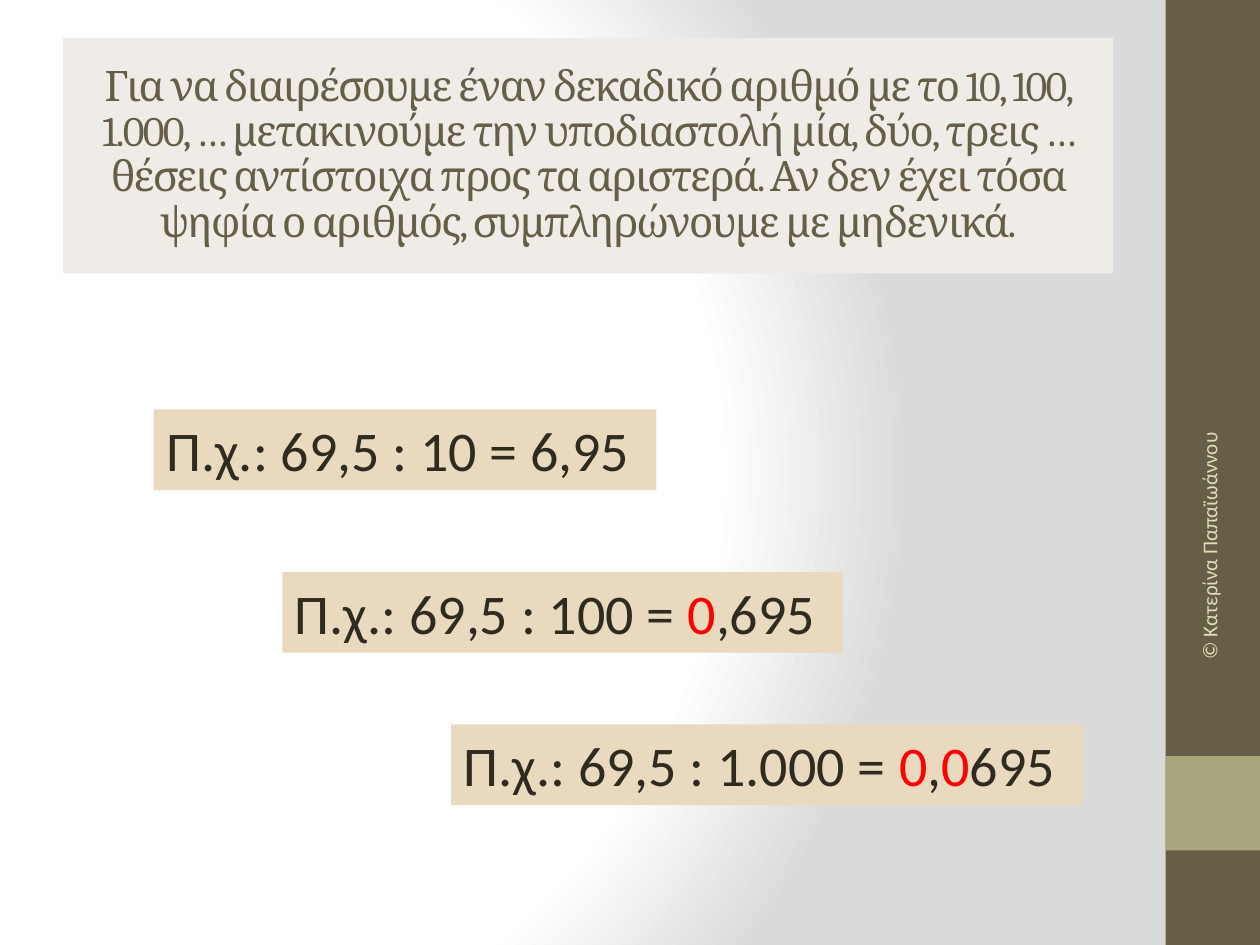
from pptx import Presentation
from pptx.dml.color import RGBColor
from pptx.enum import shapes, text
from pptx.oxml import parse_xml
from pptx.oxml.ns import nsdecls
from pptx.util import Pt

WHITE = RGBColor(0xFF, 0xFF, 0xFF)
GREY = RGBColor(0xDA, 0xDA, 0xDA)
OLIVE = RGBColor(0x67, 0x5E, 0x47)
SAGE = RGBColor(0xA9, 0xA5, 0x7C)
PALE = RGBColor(0xEF, 0xEC, 0xE7)
SAND = RGBColor(0xE9, 0xD9, 0xBE)
DARK = RGBColor(0x2F, 0x2B, 0x20)
RED = RGBColor(0xFF, 0x00, 0x00)
CREAM = RGBColor(0xDF, 0xDC, 0xB7)

RULE = (
    "Για να διαιρέσουμε έναν δεκαδικό αριθμό με το 10, 100, 1.000, … "
    "μετακινούμε την υποδιαστολή μία, δύο, τρεις … θέσεις αντίστοιχα προς τα "
    "αριστερά. Αν δεν έχει τόσα ψηφία ο αριθμός, συμπληρώνουμε με μηδενικά."
)
EXAMPLES = [
    (87.84, 234, 287.28, [("Π.χ.: 69,5 : 10 = 6,95", DARK)]),
    (161.28, 326.88, 320.4,
     [("Π.χ.: 69,5 : 100 = ", DARK), ("0", RED), (",695", DARK)]),
    (257.76, 414, 361.44,
     [("Π.χ.: 69,5 : 1.000 = ", DARK), ("0", RED), (",", DARK),
      ("0", RED), ("695", DARK)]),
]


def paint_background(slide):
    slide.background.fill.solid()
    stops = "".join(
        f'<a:gs pos="{position * 1000}"><a:srgbClr val="{color}"/></a:gs>'
        for position, color in [(0, WHITE), (75, WHITE), (100, GREY)]
    )
    gradient = parse_xml(
        f'<a:gradFill {nsdecls("a")} rotWithShape="1"><a:gsLst>{stops}</a:gsLst>'
        '<a:path path="circle">'
        '<a:fillToRect l="20000" t="50000" r="100000" b="50000"/>'
        "</a:path></a:gradFill>"
    )
    properties = slide.background._cSld.bg.bgPr
    properties.replace(properties[0], gradient)


def add_block(slide, left, top, width, height, color):
    block = slide.shapes.add_shape(
        shapes.MSO_SHAPE.RECTANGLE, Pt(left), Pt(top), Pt(width), Pt(height))
    block.shadow.inherit = False
    block.fill.solid()
    block.fill.fore_color.rgb = color
    block.line.fill.background()
    return block


def style_run(run, font_name, size, color):
    run.font.name = font_name
    run.font.size = Pt(size)
    run.font.color.rgb = color


def add_rule(slide):
    title = slide.shapes.title
    title.left, title.top, title.width, title.height = map(
        Pt, (36, 21.6, 600, 134.64))
    title.fill.solid()
    title.fill.fore_color.rgb = PALE
    frame = title.text_frame
    frame.text = RULE
    frame.word_wrap = True
    frame.auto_size = text.MSO_AUTO_SIZE.NONE
    frame.vertical_anchor = text.MSO_ANCHOR.MIDDLE
    paragraph = frame.paragraphs[0]
    paragraph.alignment = text.PP_ALIGN.CENTER
    paragraph.line_spacing = 0.9
    run = paragraph.runs[0]
    style_run(run, "Cambria", 24, OLIVE)
    run.font._element.set("spc", "-100")


def add_example(slide, left, top, width, parts):
    frame = add_block(slide, left, top, width, 46.08, SAND).text_frame
    frame.word_wrap = True
    frame.vertical_anchor = text.MSO_ANCHOR.TOP
    paragraph = frame.paragraphs[0]
    paragraph.alignment = text.PP_ALIGN.LEFT
    for wording, color in parts:
        run = paragraph.add_run()
        run.text = wording
        style_run(run, "Calibri", 32, color)


def add_author(slide):
    author = slide.shapes.add_textbox(
        Pt(597.6), Pt(318.96), Pt(186.48), Pt(28.8))
    author.rotation = 270
    frame = author.text_frame
    frame.text = "© Κατερίνα Παπαϊωάννου"
    frame.word_wrap = True
    frame.vertical_anchor = text.MSO_ANCHOR.MIDDLE
    paragraph = frame.paragraphs[0]
    paragraph.alignment = text.PP_ALIGN.RIGHT
    style_run(paragraph.runs[0], "Calibri", 12, CREAM)


def main():
    presentation = Presentation()
    presentation.slide_width, presentation.slide_height = Pt(720), Pt(540)
    slide = presentation.slides.add_slide(presentation.slide_layouts[5])
    paint_background(slide)
    add_block(slide, 666, 0, 54, 540, OLIVE)
    add_block(slide, 666, 432, 54, 54, SAGE)
    add_rule(slide)
    for example in EXAMPLES:
        add_example(slide, *example)
    add_author(slide)
    presentation.save("out.pptx")


if __name__ == "__main__":
    main()
